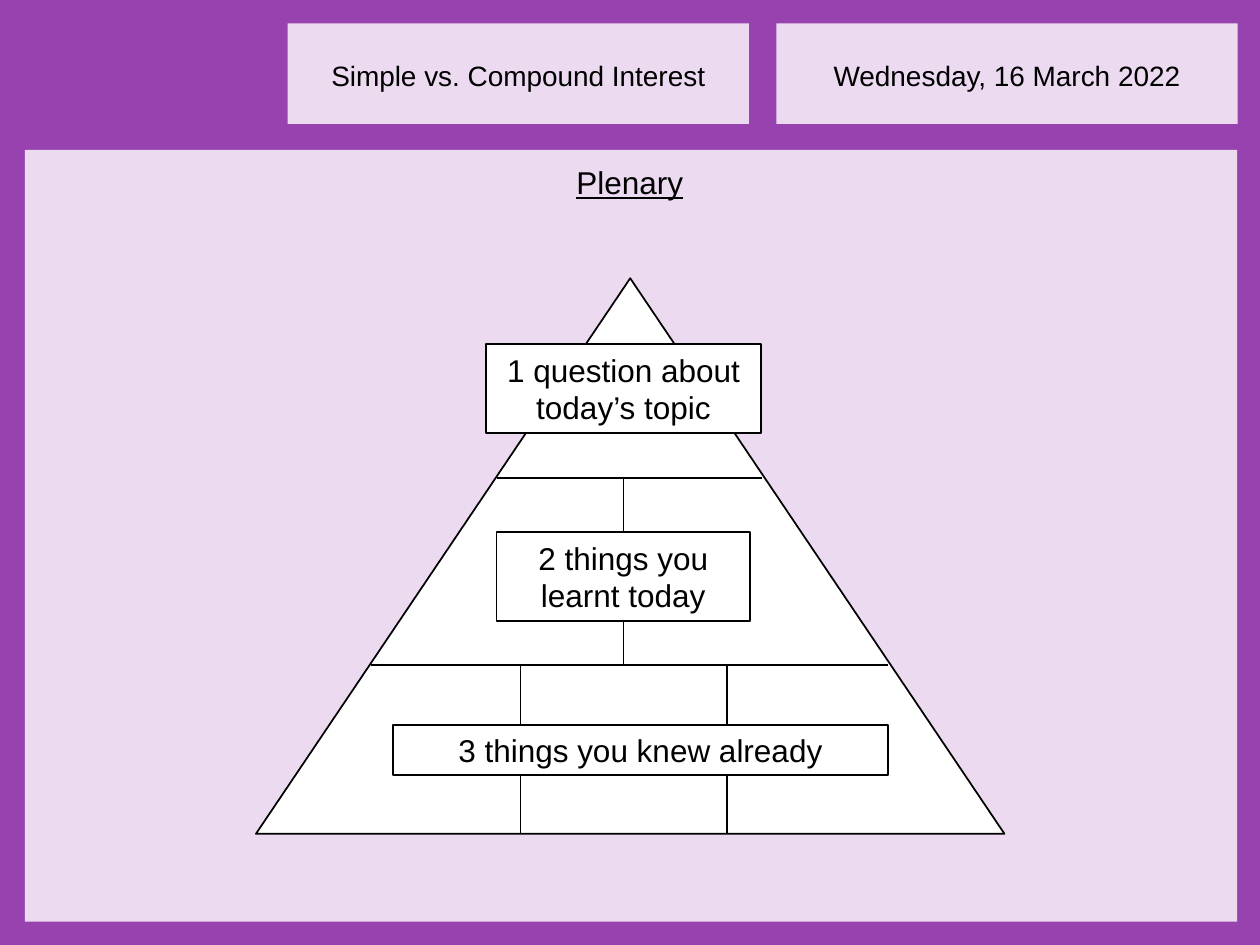
from pptx import Presentation
from pptx.dml.color import RGBColor
from pptx.enum.shapes import MSO_CONNECTOR, MSO_SHAPE
from pptx.enum.text import MSO_ANCHOR, PP_ALIGN
from pptx.util import Cm, Pt
from lxml import etree

RECT = MSO_SHAPE.RECTANGLE
TRIANGLE = MSO_SHAPE.ISOSCELES_TRIANGLE
STRAIGHT = MSO_CONNECTOR.STRAIGHT
MIDDLE = MSO_ANCHOR.MIDDLE
CENTER = PP_ALIGN.CENTER

PURPLE, LILAC, WHITE, BLACK = "9842B0", "ECDAF1", "FFFFFF", "000000"
FONT = "Arial"
A_NS = "http://schemas.openxmlformats.org/drawingml/2006/main"


def color(hex_value):
    return RGBColor.from_string(hex_value)


def add_box(s, x, y, w, h, fill, line=None, shape=RECT):
    sp = s.shapes.add_shape(shape, Cm(x), Cm(y), Cm(w), Cm(h))
    sp.shadow.inherit = False
    sp.fill.solid()
    sp.fill.fore_color.rgb = color(fill)
    if line:
        sp.line.color.rgb = color(line)
        sp.line.width = Pt(1)
    else:
        sp.line.fill.background()
    return sp


def add_line(s, x1, y1, x2, y2):
    ln = s.shapes.add_connector(STRAIGHT, Cm(x1), Cm(y1), Cm(x2), Cm(y2))
    ln.line.color.rgb = color(BLACK)
    ln.line.width = Pt(1)
    etree.SubElement(ln._element.spPr, f"{{{A_NS}}}effectLst")


def write(sp, text, size, underline=None):
    tf = sp.text_frame
    tf.word_wrap = True
    tf.vertical_anchor = MIDDLE
    p = tf.paragraphs[0]
    p.alignment = CENTER
    r = p.add_run()
    r.text = text
    style = {"name": FONT, "size": Pt(size), "underline": underline}
    for key, value in style.items():
        setattr(r.font, key, value)
    r.font.color.rgb = color(BLACK)


def add_text(s, x, y, w, h, text, size, underline=None):
    sp = s.shapes.add_textbox(Cm(x), Cm(y), Cm(w), Cm(h))
    write(sp, text, size, underline)


def add_header(s, x, y, w, h, text):
    """Lilac header panel with one line of text."""
    add_box(s, x, y, w, h, LILAC)
    add_text(s, x, y + 0.57, w, 0.94, text, 16)


def add_content(s, x, y, w, h, title):
    """Main panel with an underlined title at the top."""
    add_box(s, x, y, w, h, LILAC)
    add_text(s, x + 0.15, y + 0.13, w - 0.35, 1.02, title, 18, True)


def add_pyramid(s, x, y, w, h):
    """Three-tier pyramid split into 1, 2 and 3 cells, with a label per tier."""
    add_box(s, x, y, w, h, WHITE, BLACK, TRIANGLE)
    upper, lower = 4.02, 7.8

    # Tier and cell dividers: x1, y1, x2, y2
    dividers = [
        (2.31, lower, 12.75, lower),
        (4.85, upper, 10.21, upper),
        (7.41, upper, 7.41, lower),
        (5.33, lower, 5.33, h),
        (9.5, lower, 9.5, h),
    ]
    for x1, y1, x2, y2 in dividers:
        add_line(s, x + x1, y + y1, x + x2, y + y2)

    # Labels: left, top, width, height, text
    labels = [
        (2.76, 9, 9.98, 1.02, "3 things you knew already"),
        (4.85, 5.11, 5.11, 1.8, "2 things you learnt today"),
        (4.64, 1.32, 5.54, 1.8, "1 question about today’s topic"),
    ]
    for left, top, width, height, text in labels:
        sp = add_box(s, x + left, y + top, width, height, WHITE, BLACK)
        write(sp, text, 18)


def main():
    prs = Presentation()
    prs.slide_width, prs.slide_height = Cm(25.4), Cm(19.05)
    s = prs.slides.add_slide(prs.slide_layouts[6])

    # Purple frame
    add_box(s, 0, 0, 25.4, 19.05, PURPLE)

    # Header panels
    add_header(s, 15.65, 0.47, 9.3, 2.03, "Wednesday, 16 March 2022")
    add_header(s, 5.8, 0.47, 9.3, 2.03, "Simple vs. Compound Interest")

    # Plenary panel and pyramid
    add_content(s, 0.5, 3.02, 24.44, 15.56, "Plenary")
    add_pyramid(s, 5.16, 5.61, 15.09, 11.2)

    prs.save("out.pptx")


if __name__ == "__main__":
    main()
